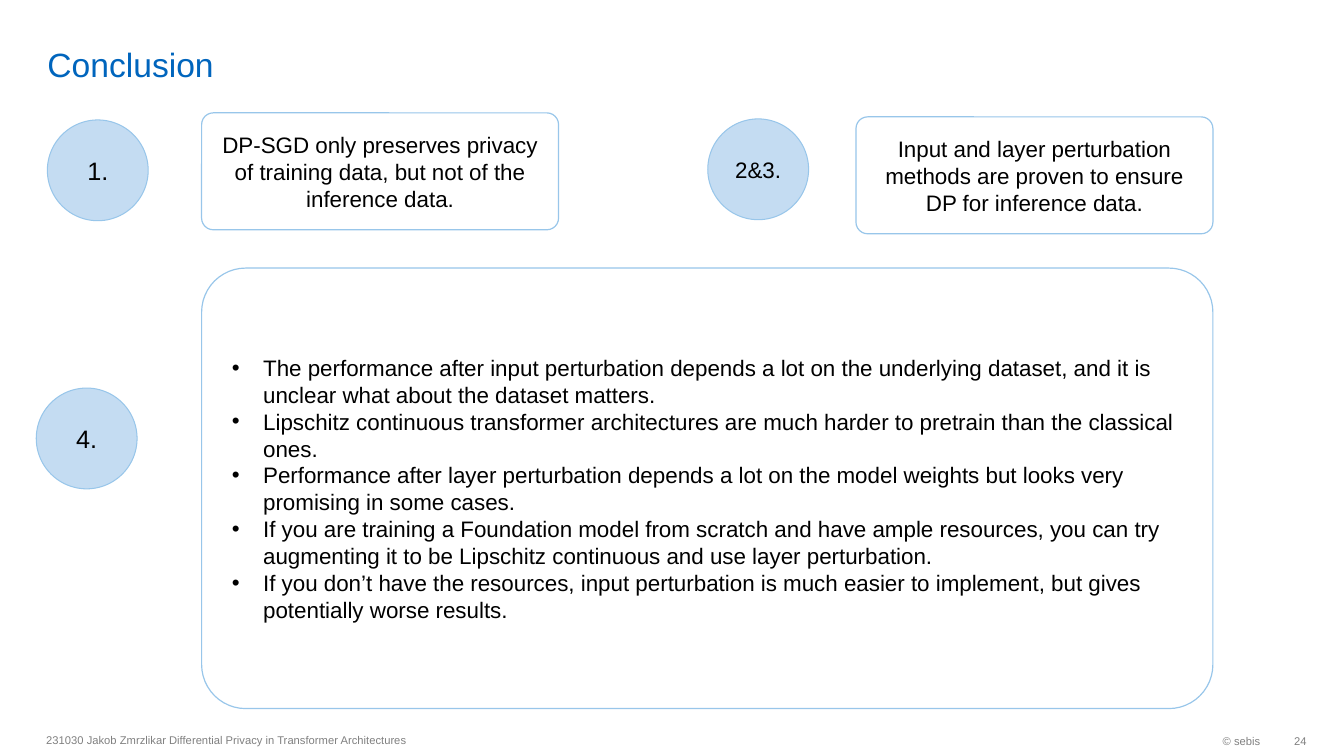
from lxml.etree import SubElement
from pptx import Presentation
from pptx.dml.color import RGBColor
from pptx.enum.shapes import MSO_SHAPE as Shape
from pptx.enum.text import MSO_ANCHOR as Anchor, MSO_AUTO_SIZE as AutoSize, PP_ALIGN as Align
from pptx.oxml.ns import qn
from pptx.util import Pt

PX = 9144
BLACK, GREY, TITLE_BLUE = "000000", "808080", "0065BD"
PALE_BLUE, OUTLINE_BLUE, WHITE = "C4DCF2", "98C6EA", "FFFFFF"
BADGE_SIZE = 100
CARD_SIZE = (354, 116)

BADGES = [("1.", 47, 119, 18), ("2&3.", 702, 118, 16), ("4.", 36, 385, 18)]
CARDS = [
    ("DP-SGD only preserves privacy of training data, but not of the inference data.", 200, 112),
    ("Input and layer perturbation methods are proven to ensure DP for inference data.", 849, 116),
]
FINDINGS = [
    "The performance after input perturbation depends a lot on the underlying dataset, "
    "and it is unclear what about the dataset matters.",
    "Lipschitz continuous transformer architectures are much harder to pretrain than the classical ones.",
    "Performance after layer perturbation depends a lot on the model weights "
    "but looks very promising in some cases.",
    "If you are training a Foundation model from scratch and have ample resources, "
    "you can try augmenting it to be Lipschitz continuous and use layer perturbation.",
    "If you don’t have the resources, input perturbation is much easier to implement, "
    "but gives potentially worse results.",
]
FOOTERS = [
    ("231030 Jakob Zmrzlikar Differential Privacy in Transformer Architectures",
     (36, 718, 630, 32), Align.LEFT, 10),
    ("© sebis", (1026, 719, 234, 32), Align.RIGHT, 10),
    ("24", (1260, 719, 36, 32), Align.RIGHT, 0),
]


def px(length):
    """Turn px into EMU."""
    return round(length * PX)


def rgb(hex_color):
    """Turn a hex string into a colour."""
    return RGBColor.from_string(hex_color)


def apply_format(target, values):
    """Set every attribute named in the dict."""
    for name, value in values.items():
        setattr(target, name, value)


def place(shape, box):
    """Move and size a shape."""
    apply_format(shape, dict(zip(("left", "top", "width", "height"), map(px, box))))


def write(shape, lines, size, color=BLACK, align=Align.LEFT, anchor=Anchor.MIDDLE, insets=(10, 5, 10, 5)):
    """Fill a shape with formatted paragraphs."""
    frame = shape.text_frame
    frame.text = "\n".join(lines)
    sides = ("margin_left", "margin_top", "margin_right", "margin_bottom")
    apply_format(frame, {"word_wrap": True, "auto_size": AutoSize.NONE, "vertical_anchor": anchor,
                         **dict(zip(sides, map(px, insets)))})
    for paragraph in frame.paragraphs:
        apply_format(paragraph, {"alignment": align, "space_before": Pt(0)})
        for run in paragraph.runs:
            apply_format(run.font, {"name": "Arial", "size": Pt(size)})
            run.font.color.rgb = rgb(color)


def add_outlined(slide, kind, box, fill, line_width):
    """Add a filled shape with the light blue outline."""
    shape = slide.shapes.add_shape(kind, *map(px, box))
    shape.shadow.inherit = False
    shape.fill.solid()
    shape.fill.fore_color.rgb = rgb(fill)
    shape.line.color.rgb = rgb(OUTLINE_BLUE)
    shape.line.width = Pt(line_width)
    return shape


def add_badge(slide, label, left, top, size):
    """Add a numbered circle."""
    badge = add_outlined(slide, Shape.OVAL, (left, top, BADGE_SIZE, BADGE_SIZE), PALE_BLUE, 0.75)
    write(badge, [label], size, align=Align.CENTER, insets=(0, 0, 0, 0))


def add_card(slide, box):
    """Add a white rounded card."""
    card = add_outlined(slide, Shape.ROUNDED_RECTANGLE, box, WHITE, 0.85)
    card.adjustments[0] = 0.1
    return card


def add_footer(slide, text, box, align, right_inset):
    """Add a small grey footer text."""
    footer = slide.shapes.add_textbox(*map(px, box))
    write(footer, [text], 8, GREY, align, insets=(10, 5, right_inset, 5))


def add_bullets(body, indent):
    """Give every paragraph a hanging bullet."""
    for paragraph in body.text_frame.paragraphs:
        properties = paragraph._p.get_or_add_pPr()
        properties.set("marL", str(px(indent)))
        properties.set("indent", str(-px(indent)))
        SubElement(properties, qn("a:buFont"), typeface="Arial")
        SubElement(properties, qn("a:buChar"), char="•")


def main():
    """Build the conclusion slide."""
    deck = Presentation()
    apply_format(deck, {"slide_width": px(1333), "slide_height": px(750)})
    slide = deck.slides.add_slide(deck.slide_layouts[1])
    title, findings = slide.placeholders

    place(title, (37, 5, 1158, 79))
    write(title, ["Conclusion"], 24, TITLE_BLUE, anchor=Anchor.BOTTOM, insets=(10, 0, 10, 0))

    for badge in BADGES:
        add_badge(slide, *badge)
    for text, left, top in CARDS:
        card = add_card(slide, (left, top, *CARD_SIZE))
        write(card, [text], 16, align=Align.CENTER, insets=(11, 5, 11, 5))

    panel = add_card(slide, (200, 266, 1003, 437))
    panel.element.addnext(findings.element)
    place(findings, (224, 279, 955, 411))
    write(findings, FINDINGS, 16, insets=(6, 6, 6, 6))
    add_bullets(findings, 31)

    for footer in FOOTERS:
        add_footer(slide, *footer)
    deck.save("out.pptx")


if __name__ == "__main__":
    main()
